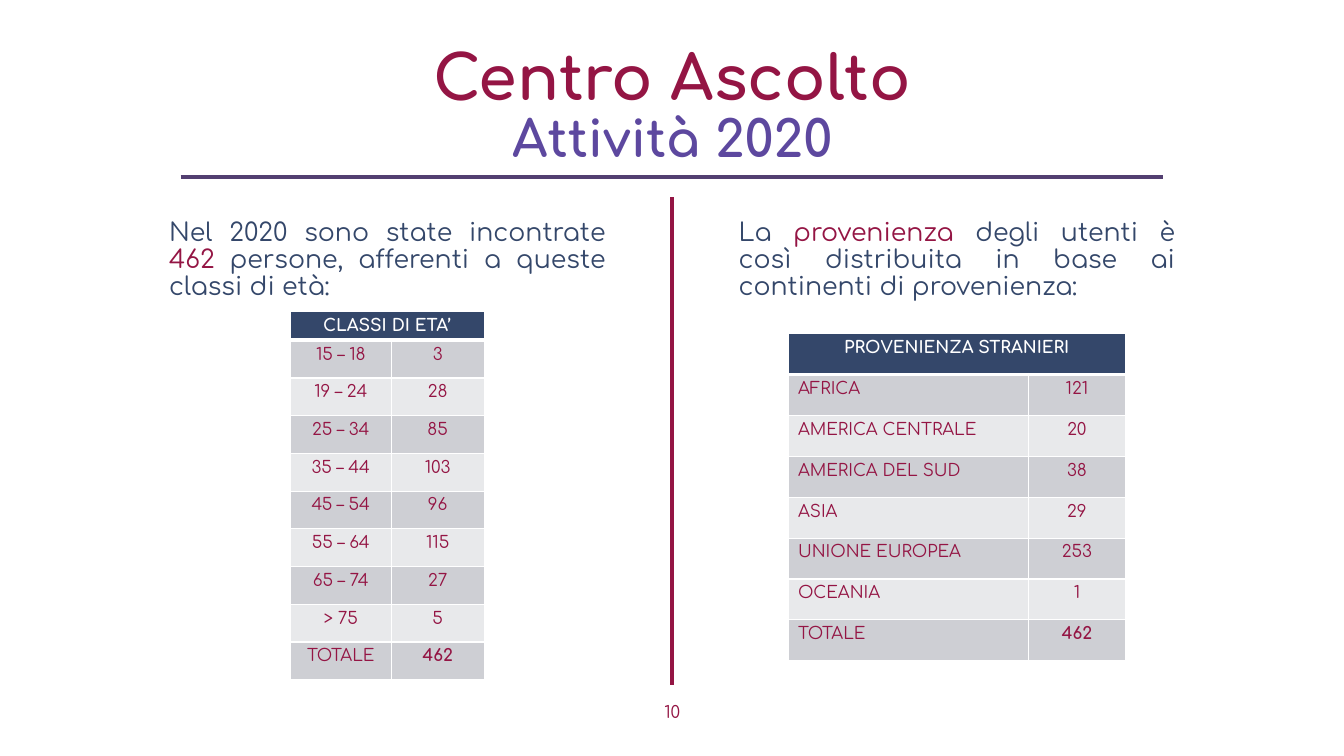
"""Build the slide on the 2020 activity of the listening centre."""
from lxml.etree import SubElement
from pptx import Presentation
from pptx.dml.color import RGBColor
from pptx.enum.text import MSO_ANCHOR, MSO_AUTO_SIZE, PP_ALIGN
from pptx.oxml.ns import qn
from pptx.util import Cm, Pt

FONT = "Comfortaa"
COLORS = {
    "crimson": "941544", "violet": "5D489F", "plum": "533F71", "navy": "34476A",
    "white": "FFFFFF", "dark_band": "CECFD4", "light_band": "E8E9EB",
}
CENTER, LEFT, JUSTIFY = PP_ALIGN.CENTER, PP_ALIGN.LEFT, PP_ALIGN.JUSTIFY

TEXTS = [
    {"box": (2.34, 1.07, 29.21, 1.68), "size": 44, "bold": True, "align": CENTER,
     "runs": [("Centro Ascolto", "crimson")]},
    {"box": (2.34, 2.74, 29.21, 1.68), "size": 36, "bold": True, "align": CENTER,
     "runs": [("Attività 2020", "violet")]},
    {"box": (4.01, 5.41, 11.51, 11.76), "size": 18, "bold": False, "align": JUSTIFY,
     "runs": [("Nel 2020 sono state incontrate ", "navy"), ("462", "crimson"),
              (" persone, afferenti a queste classi di età:", "navy")]},
    {"box": (18.36, 5.41, 11.51, 11.76), "size": 18, "bold": False, "align": JUSTIFY,
     "runs": [("La ", "navy"), ("provenienza", "crimson"),
              (" degli utenti è così distribuita in base ai continenti di provenienza:", "navy")]},
]
TABLES = [
    {"header": "CLASSI DI ETA’", "origin": (7.32, 7.85), "columns": (2.54, 2.34),
     "header_height": 0.66, "row_height": 0.95, "label_align": CENTER,
     "rows": [("15 – 18", 3), ("19 – 24", 28), ("25 – 34", 85), ("35 – 44", 103),
              ("45 – 54", 96), ("55 – 64", 115), ("65 – 74", 27), ("> 75", 5),
              ("TOTALE", 462)]},
    {"header": "PROVENIENZA STRANIERI", "origin": (19.86, 8.41), "columns": (6.05, 2.46),
     "header_height": 1.03, "row_height": 1.03, "label_align": LEFT,
     "rows": [("AFRICA", 121), ("AMERICA CENTRALE", 20), ("AMERICA DEL SUD", 38),
              ("ASIA", 29), ("UNIONE EUROPEA", 253), ("OCEANIA", 1), ("TOTALE", 462)]},
]
RULES = [
    {"start": (4.55, 4.46), "end": (29.31, 4.46), "color": "plum", "width": 2.25},
    {"start": (16.94, 4.97), "end": (16.94, 17.26), "color": "crimson", "width": 3},
]
PAGE_NUMBER = {"text": "10", "box": (15.37, 17.55, 3.15, 0.76)}


def rgb(name):
    return RGBColor.from_string(COLORS[name])


def add_run(paragraph, text, size, color, bold=False):
    run = paragraph.add_run()
    run.text = text
    run.font.name = FONT
    run.font.size = Pt(size)
    run.font.bold = bold
    run.font.color.rgb = rgb(color)


def fill_placeholder(shape, text):
    shape.left, shape.top, shape.width, shape.height = map(Cm, text["box"])
    frame = shape.text_frame
    frame.word_wrap = True
    frame.auto_size = MSO_AUTO_SIZE.NONE
    frame.vertical_anchor = MSO_ANCHOR.TOP
    paragraph = frame.paragraphs[0]
    properties = paragraph._p.get_or_add_pPr()
    properties.set("marL", "0")
    properties.set("indent", "0")
    SubElement(properties, qn("a:buNone"))
    paragraph.alignment = text["align"]
    paragraph.line_spacing = 0.9
    paragraph.space_before = Pt(0)
    for words, color in text["runs"]:
        add_run(paragraph, words, text["size"], color, text["bold"])


def style_cell(cell, fill, is_header):
    properties = cell._tc.get_or_add_tcPr()
    for side in "LRTB":
        points = 3 if is_header and side == "B" else 1
        line = SubElement(properties, qn(f"a:ln{side}"), w=str(Pt(points)))
        solid = SubElement(line, qn("a:solidFill"))
        SubElement(solid, qn("a:srgbClr"), val=COLORS["white"])
    cell.fill.solid()
    cell.fill.fore_color.rgb = rgb(fill)


def write_cell(cell, text, align, color, bold):
    paragraph = cell.text_frame.paragraphs[0]
    paragraph.alignment = align
    add_run(paragraph, text, 12, color, bold)


def add_count_table(slide, data):
    rows = data["rows"]
    width = sum(data["columns"])
    height = data["header_height"] + len(rows) * data["row_height"]
    table = slide.shapes.add_table(len(rows) + 1, 2, *map(Cm, (*data["origin"], width, height))).table
    for column, column_width in zip(table.columns, data["columns"]):
        column.width = Cm(column_width)
    for index, row in enumerate(table.rows):
        row.height = Cm(data["row_height"] if index else data["header_height"])
        fill = ("light_band", "dark_band")[index % 2] if index else "navy"
        for cell in row.cells:
            style_cell(cell, fill, index == 0)
    table.cell(0, 0).merge(table.cell(0, 1))
    write_cell(table.cell(0, 0), data["header"], CENTER, "white", True)
    for index, (label, count) in enumerate(rows, start=1):
        write_cell(table.cell(index, 0), label, data["label_align"], "crimson", False)
        write_cell(table.cell(index, 1), str(count), CENTER, "crimson", label == "TOTALE")


def add_rule(slide, rule):
    connector = slide.shapes.add_connector(1, *map(Cm, (*rule["start"], *rule["end"])))
    connector.line.color.rgb = rgb(rule["color"])
    connector.line.width = Pt(rule["width"])
    SubElement(connector._element.spPr, qn("a:effectLst"))


def add_page_number(slide):
    frame = slide.shapes.add_textbox(*map(Cm, PAGE_NUMBER["box"])).text_frame
    frame.word_wrap = True
    paragraph = frame.paragraphs[0]
    paragraph.alignment = CENTER
    add_run(paragraph, PAGE_NUMBER["text"], 12, "crimson")


def main():
    presentation = Presentation()
    presentation.slide_width, presentation.slide_height = Cm(33.87), Cm(19.05)
    slide = presentation.slides.add_slide(presentation.slide_layouts.get_by_name("Comparison"))
    placeholders = list(slide.placeholders)
    for shape, text in zip(placeholders, TEXTS):
        fill_placeholder(shape, text)
    for shape in placeholders[len(TEXTS):]:
        shape.element.getparent().remove(shape.element)
    for data in TABLES:
        add_count_table(slide, data)
    for rule in RULES:
        add_rule(slide, rule)
    add_page_number(slide)
    presentation.save("out.pptx")


if __name__ == "__main__":
    main()
